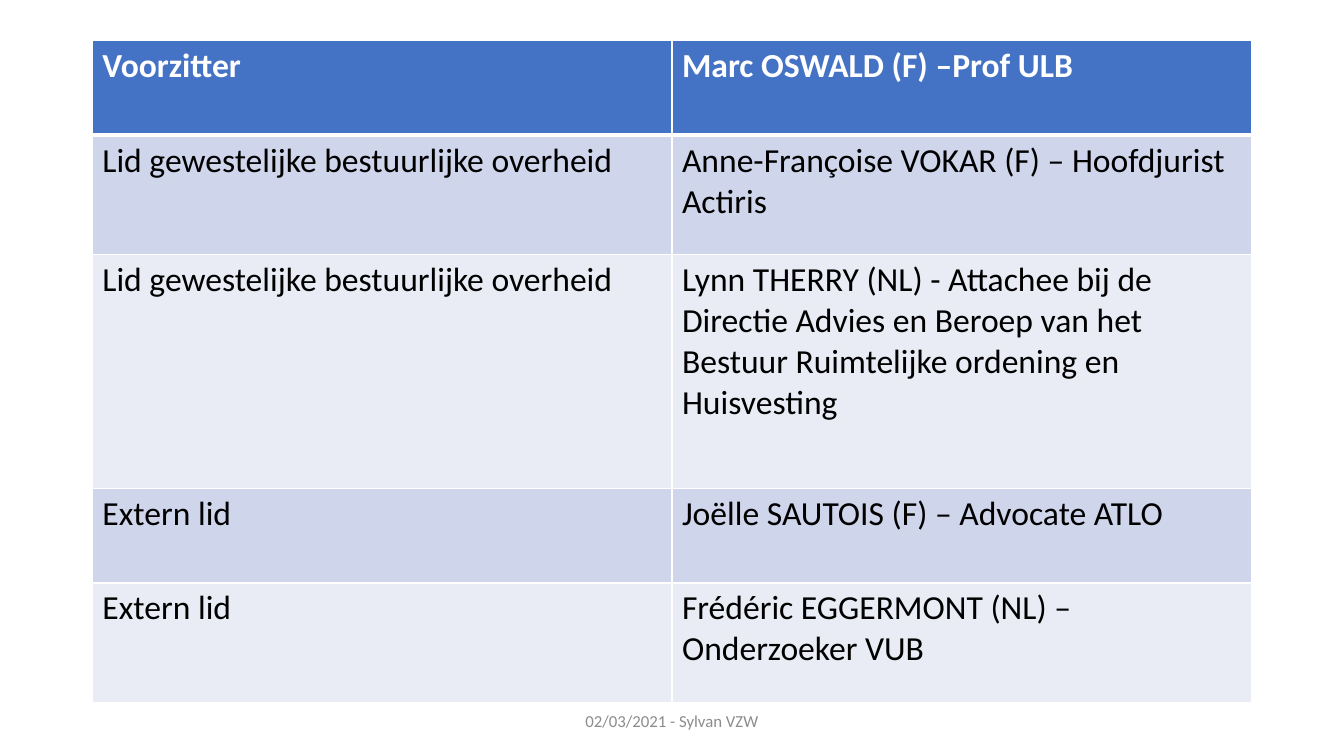
from lxml.etree import SubElement
from pptx import Presentation
from pptx.dml.color import RGBColor
from pptx.enum.text import MSO_ANCHOR, PP_ALIGN
from pptx.oxml import parse_xml
from pptx.oxml.ns import nsdecls, qn
from pptx.util import Pt

# Content: role, member, row height
MEMBERS = [
    ("Voorzitter", "Marc OSWALD (F) –Prof ULB", 67.5),
    ("Lid gewestelijke bestuurlijke overheid",
     "Anne-Françoise VOKAR (F) – Hoofdjurist Actiris", 85.5),
    ("Lid gewestelijke bestuurlijke overheid",
     "Lynn THERRY (NL) - Attachee bij de Directie Advies en Beroep van het "
     "Bestuur Ruimtelijke ordening en Huisvesting", 167),
    ("Extern lid", "Joëlle SAUTOIS (F) – Advocate ATLO", 67.5),
    ("Extern lid", "Frédéric EGGERMONT (NL) – Onderzoeker VUB", 85.5),
]
FOOTER = "02/03/2021 - Sylvan VZW"

# Colours and formats
WHITE = RGBColor(0xFF, 0xFF, 0xFF)
BLACK = RGBColor(0, 0, 0)
GREY = RGBColor(0x8C, 0x8C, 0x8C)
BLUE = RGBColor(0x44, 0x72, 0xC4)
BANDS = [RGBColor(0xE9, 0xEB, 0xF5), RGBColor(0xCF, 0xD5, 0xEA)]

HEADER_FONT = {"name": "Calibri", "size": Pt(24), "bold": True}
BODY_FONT = {**HEADER_FONT, "bold": False}
FOOTER_FONT = {"name": "Calibri", "size": Pt(12)}

COLUMN_WIDTH = 414
TABLE_LEFT, TABLE_TOP = 66, 29


def write(frame, text, font_format, color):
    run = frame.paragraphs[0].add_run()
    run.text = text
    for key, value in font_format.items():
        setattr(run.font, key, value)
    run.font.color.rgb = color


def add_borders(cell, widths):
    properties = cell._tc.get_or_add_tcPr()
    for position, (side, width) in enumerate(widths.items()):
        border = parse_xml(f'<a:{side} {nsdecls("a")} w="{Pt(width)}"/>')
        solid = SubElement(border, qn("a:solidFill"))
        SubElement(solid, qn("a:srgbClr"), val=str(WHITE))
        properties.insert(position, border)


presentation = Presentation()
presentation.slide_width, presentation.slide_height = Pt(960), Pt(540)
slide = presentation.slides.add_slide(presentation.slide_layouts[6])

# Members table
total_height = sum(height for _, _, height in MEMBERS)
members = slide.shapes.add_table(
    len(MEMBERS), 2, Pt(TABLE_LEFT), Pt(TABLE_TOP),
    Pt(2 * COLUMN_WIDTH), Pt(total_height)).table
for column in members.columns:
    column.width = Pt(COLUMN_WIDTH)

for row, (role, member, height) in enumerate(MEMBERS):
    members.rows[row].height = Pt(height)
    is_header = row == 0
    for col, text in enumerate((role, member)):
        cell = members.cell(row, col)
        cell.fill.solid()
        cell.fill.fore_color.rgb = BLUE if is_header else BANDS[row % 2]
        write(cell.text_frame, text,
              HEADER_FONT if is_header else BODY_FONT,
              WHITE if is_header else BLACK)
        add_borders(cell, {"lnL": 1, "lnR": 1,
                           "lnT": 3 if row == 1 else 1,
                           "lnB": 3 if is_header else 1})

# Footer
footer = slide.shapes.add_textbox(Pt(318), Pt(500.5), Pt(324), Pt(28.75)).text_frame
footer.word_wrap = True
footer.vertical_anchor = MSO_ANCHOR.MIDDLE
footer.paragraphs[0].alignment = PP_ALIGN.CENTER
write(footer, FOOTER, FOOTER_FONT, GREY)

presentation.save("out.pptx")
